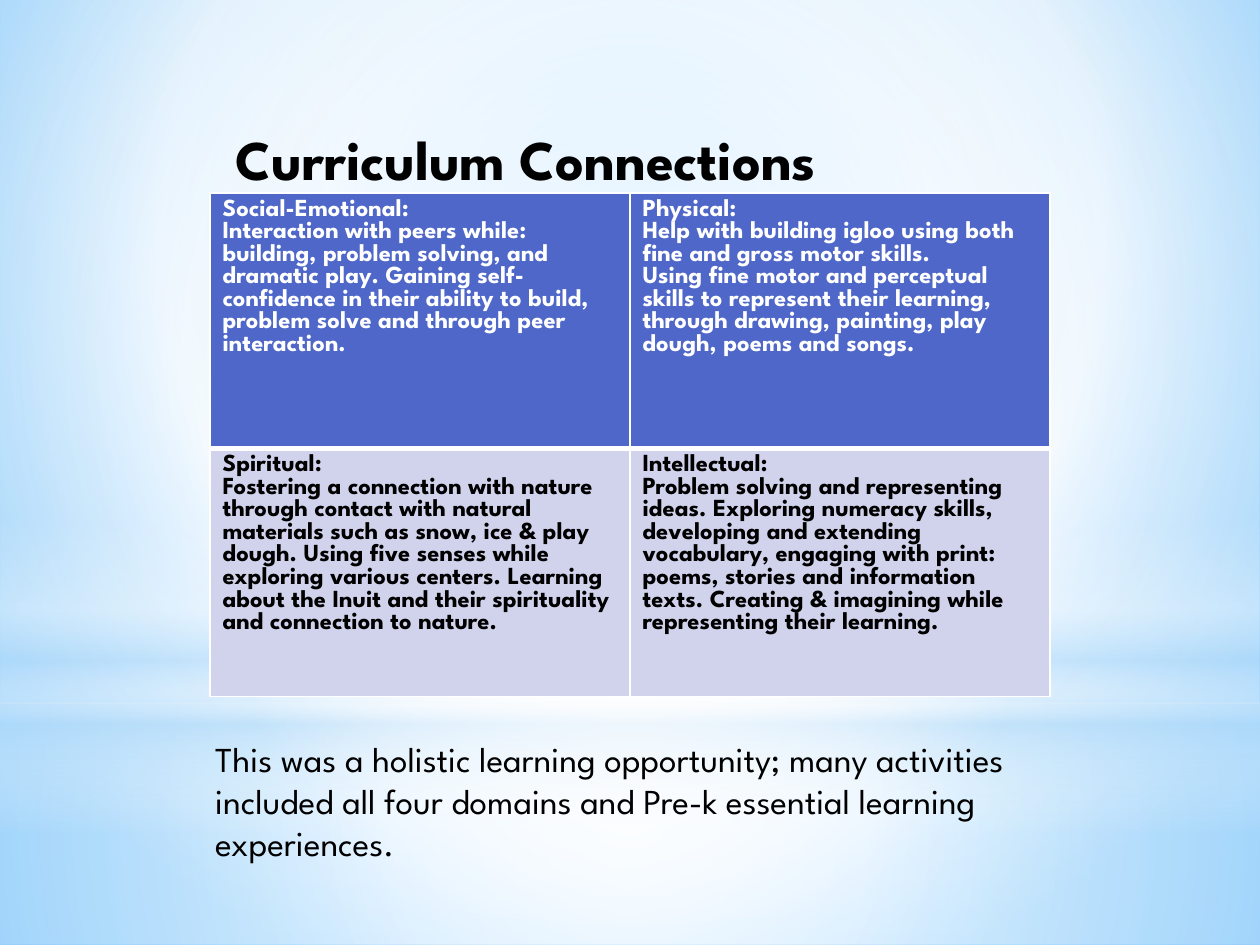
from dataclasses import dataclass

from lxml.etree import SubElement
from pptx import Presentation
from pptx.dml.color import RGBColor
from pptx.enum.shapes import MSO_SHAPE
from pptx.oxml.ns import qn
from pptx.util import Inches, Pt

WIDTH, HEIGHT = 10, 7.5


@dataclass(frozen=True)
class Theme:
    font: str = "League Spartan"
    ink: str = "000000"
    white: str = "FFFFFF"
    haze: str = "B4DCFA"
    sky: str = "9ED5FF"
    deep_sky: str = "5BB9FF"
    header: str = "4E67C8"
    row: str = "D0D3EB"
    title_size: int = 32
    body_size: int = 20
    cell_size: int = 14
    box_leading: float = 1.2
    cell_leading: float = 0.92
    thin_rule: int = 1
    thick_rule: int = 3


THEME = Theme()
CENTRE = (50, 50, 50, 50)

DOMAINS = [
    [
        [
            "Social-Emotional:",
            "Interaction with peers while: building, problem solving, and dramatic play. "
            "Gaining self-confidence in their ability to build, problem solve and through "
            "peer interaction.",
        ],
        [
            "Physical:",
            "Help with building igloo using both fine and gross motor skills.",
            "Using fine motor and perceptual skills to represent their learning, through "
            "drawing, painting, play dough, poems and songs.",
        ],
    ],
    [
        [
            "Spiritual:",
            "Fostering a connection with nature through contact with natural materials such "
            "as snow, ice & play dough. Using five senses while exploring various centers. "
            "Learning about the Inuit and their spirituality and connection to nature.",
        ],
        [
            "Intellectual:",
            "Problem solving and representing ideas. Exploring numeracy skills, developing "
            "and extending vocabulary, engaging with print: poems, stories and information "
            "texts. Creating & imagining while representing their learning.",
        ],
    ],
]


def fill_gradient(element, stops, focus=None, angle=0):
    solid = element.find(".//" + qn("a:solidFill"))
    gradient = solid.makeelement(qn("a:gradFill"), {"rotWithShape": "1"})
    solid.getparent().replace(solid, gradient)
    stop_list = SubElement(gradient, qn("a:gsLst"))
    for position, color, opacity in stops:
        stop = SubElement(stop_list, qn("a:gs"), pos=str(position * 1000))
        paint = SubElement(stop, qn("a:srgbClr"), val=color)
        if opacity < 100:
            SubElement(paint, qn("a:alpha"), val=str(opacity * 1000))
    if focus:
        route = SubElement(gradient, qn("a:path"), {"path": "circle"})
        edges = {side: str(share * 1000) for side, share in zip("ltrb", focus)}
        SubElement(route, qn("a:fillToRect"), edges)
    else:
        SubElement(gradient, qn("a:lin"), ang=str(angle * 60000), scaled="0")


def add_glow(page, kind, top, height, stops, **gradient):
    shape = page.shapes.add_shape(kind, 0, Inches(top), Inches(WIDTH), Inches(height))
    shape.shadow.inherit = False
    shape.line.fill.background()
    shape.fill.solid()
    fill_gradient(shape.element, stops, **gradient)


def paint_backdrop(page):
    white, haze = THEME.white, THEME.haze
    page.background.fill.solid()
    fill_gradient(
        page.element,
        [(0, THEME.sky, 100), (60, white, 100), (100, THEME.deep_sky, 100)],
        focus=(20, 10, 20, 60),
    )
    horizon = 5.58
    add_glow(page, MSO_SHAPE.RECTANGLE, horizon, HEIGHT - horizon,
             [(0, white, 91), (37, white, 76), (100, haze, 79)], focus=CENTRE)
    add_glow(page, MSO_SHAPE.RECTANGLE, 0, horizon,
             [(0, white, 89), (48, white, 62), (100, haze, 79)], focus=CENTRE)
    add_glow(page, MSO_SHAPE.RECTANGLE, 4.12, 2.5,
             [(0, white, 0), (29, white, 30), (45, haze, 40),
              (55, white, 26), (65, haze, 60), (100, white, 0)], angle=90)
    add_glow(page, MSO_SHAPE.OVAL, 1.75, horizon,
             [(0, white, 100), (56, white, 0)], focus=CENTRE)


def write_text(frame, lines, size, leading, color=THEME.ink, bold=False):
    frame.word_wrap = True
    for index, line in enumerate(lines):
        para = frame.paragraphs[0] if index == 0 else frame.add_paragraph()
        para.line_spacing = Pt(size * leading)
        span = para.add_run()
        span.text = line
        span.font.name = THEME.font
        span.font.size = Pt(size)
        span.font.bold = bold
        span.font.color.rgb = RGBColor.from_string(color)


def add_text(page, text, left, top, width, height, **style):
    box = page.shapes.add_textbox(*map(Inches, (left, top, width, height)))
    write_text(box.text_frame, [text], leading=THEME.box_leading, **style)


def rule_cell(cell, thick_side):
    properties = cell._tc.get_or_add_tcPr()
    for index, side in enumerate("LRTB"):
        weight = THEME.thick_rule if side == thick_side else THEME.thin_rule
        rule = properties.makeelement(qn("a:ln" + side), {"w": str(Pt(weight))})
        properties.insert(index, rule)
        SubElement(SubElement(rule, qn("a:solidFill")), qn("a:srgbClr"), val=THEME.white)


def add_domain_table(page):
    left, top, width, row_heights = WIDTH / 6, 1.53, WIDTH * 2 / 3, (2.03, 1.97)
    table = page.shapes.add_table(
        len(DOMAINS), len(DOMAINS[0]),
        *map(Inches, (left, top, width, sum(row_heights))),
    ).table
    looks = [(THEME.header, THEME.white, "B"), (THEME.row, THEME.ink, "T")]
    for row, height, domains, look in zip(table.rows, row_heights, DOMAINS, looks):
        row.height = Inches(height)
        fill, color, thick_side = look
        for cell, lines in zip(row.cells, domains):
            cell.fill.solid()
            cell.fill.fore_color.rgb = RGBColor.from_string(fill)
            rule_cell(cell, thick_side)
            write_text(cell.text_frame, lines, size=THEME.cell_size,
                       leading=THEME.cell_leading, color=color, bold=True)


def main():
    deck = Presentation()
    deck.slide_width, deck.slide_height = Inches(WIDTH), Inches(HEIGHT)
    page = deck.slides.add_slide(deck.slide_layouts[6])
    paint_backdrop(page)
    add_text(page, "Curriculum Connections", 1.77, 0.94, 5.45, 0.64,
             size=THEME.title_size, bold=True)
    add_domain_table(page)
    add_text(page,
             "This was a holistic learning opportunity; many activities included all four "
             "domains and Pre-k essential learning experiences.",
             1.61, 5.8, 6.69, 1.11, size=THEME.body_size)
    deck.save("out.pptx")


if __name__ == "__main__":
    main()
